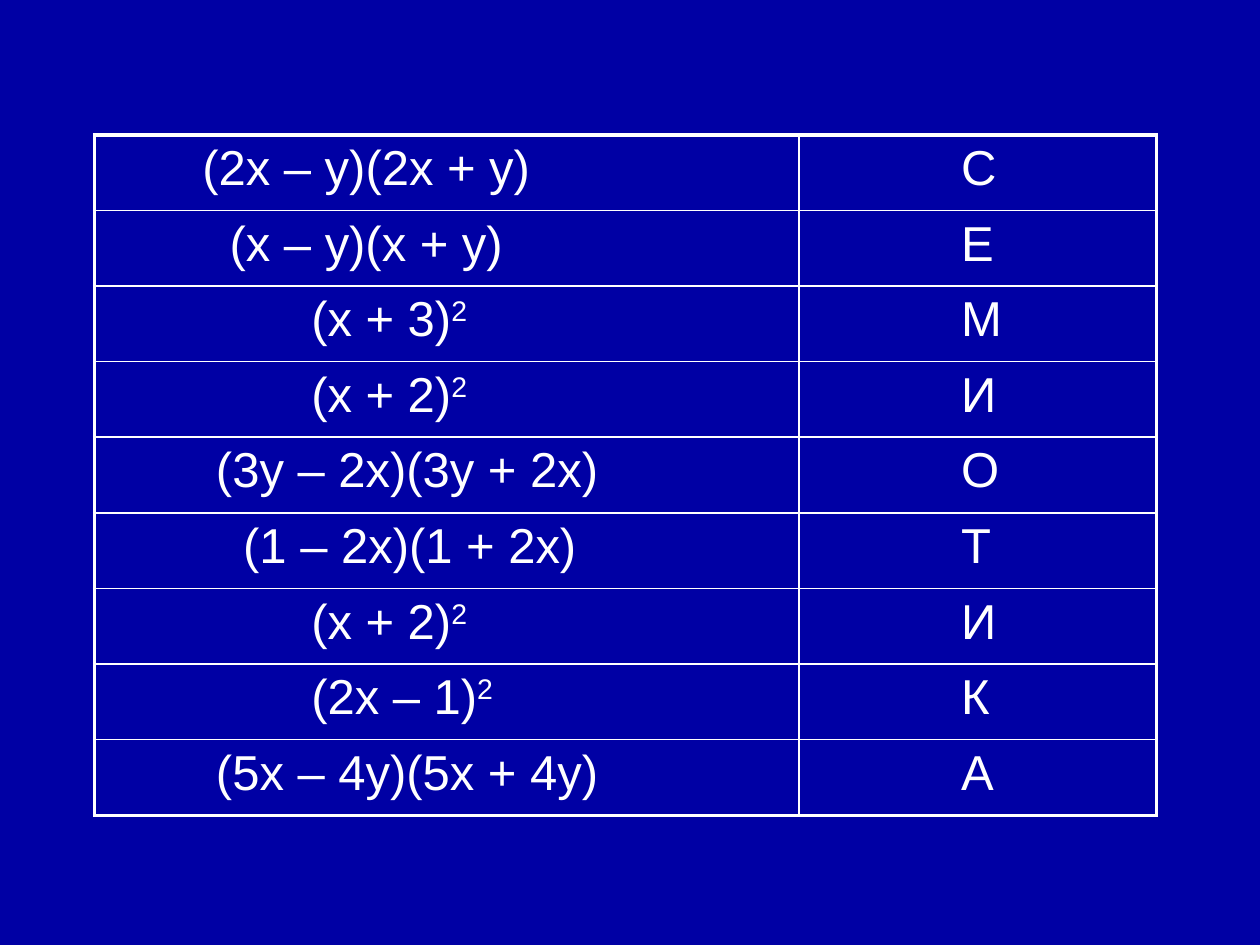
from pptx import Presentation
from pptx.dml.color import RGBColor
from pptx.oxml import parse_xml
from pptx.oxml.ns import nsdecls
from pptx.util import Inches, Pt

BLUE = RGBColor(0x00, 0x00, 0xA4)
WHITE = RGBColor(0xFF, 0xFF, 0xFF)

ANSWERS = [
    (7, "(2х – у)(2х + у)", "", "С"),
    (9, "(х – у)(х + у)", "", "Е"),
    (15, "(х + 3)", "2", "М"),
    (15, "(х + 2)", "2", "И"),
    (8, "(3у – 2х)(3у + 2х)", "", "О"),
    (10, "(1 – 2х)(1 + 2х)", "", "Т"),
    (15, "(х + 2)", "2", "И"),
    (15, "(2х – 1)", "2", "К"),
    (8, "(5х – 4у)(5х + 4у)", "", "А"),
]
LETTER_INDENT = 11
INDENT_STEP = 7.78
CELL_MARGIN = 7.2
COLUMN_WIDTHS = (5.59, 2.84)
ROW_HEIGHT = 0.6
THIN, THICK = 1, 2.25


def write(paragraph, text, size=28, font="Arial", color=WHITE, raised=False):
    run = paragraph.add_run()
    run.text = text
    run.font.size = Pt(size)
    run.font.name = font
    run.font.color.rgb = color
    if raised:
        run._r.get_or_add_rPr().set("baseline", "30000")


def draw_borders(cell, widths):
    properties = cell._tc.get_or_add_tcPr()
    for position, (side, width) in enumerate(widths.items()):
        border = parse_xml(
            f'<a:ln{side} {nsdecls("a")} w="{Pt(width)}"><a:solidFill>'
            f'<a:srgbClr val="{WHITE}"/></a:solidFill></a:ln{side}>'
        )
        properties.insert(position, border)


def fill_cell(cell, indent, text, power=""):
    cell.fill.background()
    cell.margin_left = Pt(CELL_MARGIN + indent * INDENT_STEP)
    paragraph = cell.text_frame.paragraphs[0]
    write(paragraph, text)
    if power:
        write(paragraph, power, raised=True)


def main():
    presentation = Presentation()
    presentation.slide_width, presentation.slide_height = Inches(10), Inches(7.5)
    slide = presentation.slides.add_slide(presentation.slide_layouts[6])
    slide.background.fill.solid()
    slide.background.fill.fore_color.rgb = BLUE

    row_count, column_count = len(ANSWERS), len(COLUMN_WIDTHS)
    answer_key = slide.shapes.add_table(
        row_count, column_count, Inches(0.75), Inches(1.07),
        Inches(sum(COLUMN_WIDTHS)), Inches(ROW_HEIGHT * row_count),
    ).table
    answer_key.first_row = False
    answer_key.horz_banding = False
    for column, width in zip(answer_key.columns, COLUMN_WIDTHS):
        column.width = Inches(width)

    for row, (indent, factors, power, letter) in enumerate(ANSWERS):
        answer_key.rows[row].height = Inches(ROW_HEIGHT)
        fill_cell(answer_key.cell(row, 0), indent, factors, power)
        fill_cell(answer_key.cell(row, 1), LETTER_INDENT, letter)
        for column in range(column_count):
            draw_borders(answer_key.cell(row, column), {
                "L": THICK if column == 0 else THIN,
                "R": THICK if column == column_count - 1 else THIN,
                "T": THICK if row == 0 else THIN,
                "B": THICK if row == row_count - 1 else THIN,
            })

    presentation.save("out.pptx")


if __name__ == "__main__":
    main()
